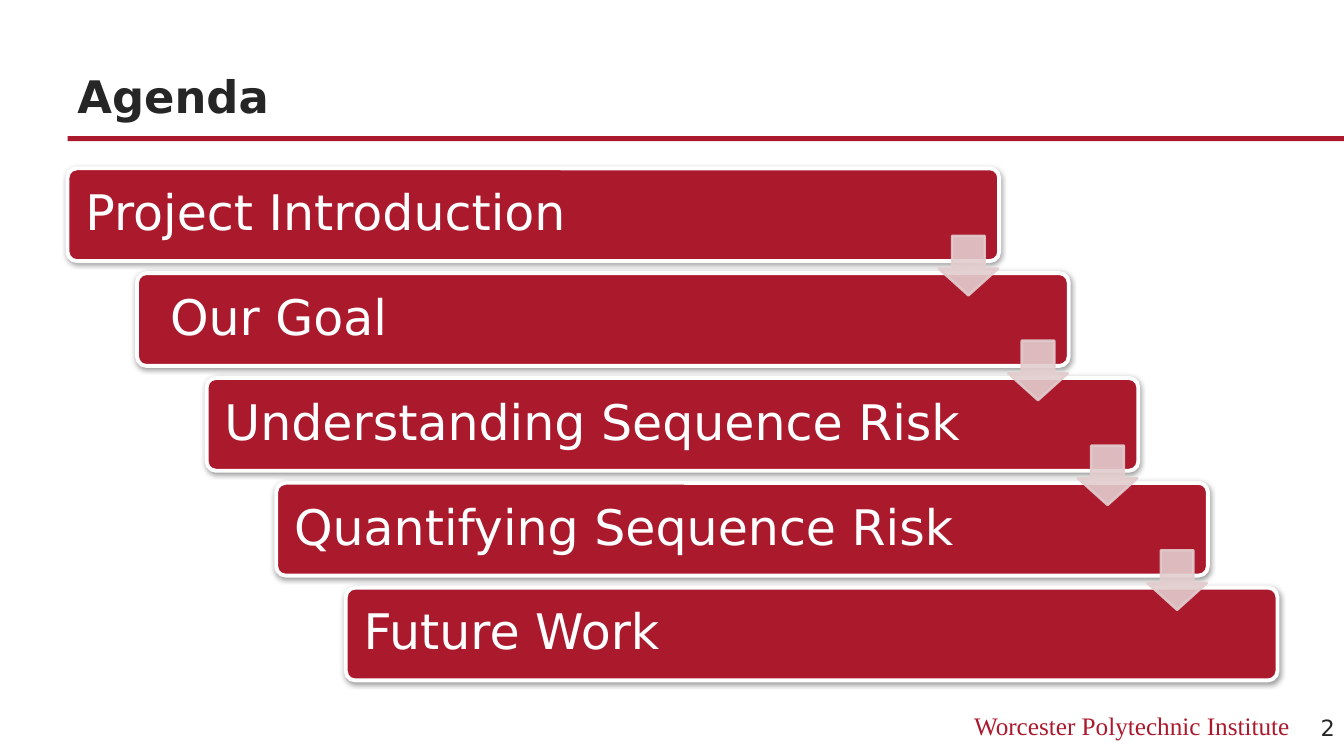
from dataclasses import dataclass

import pptx
import pptx.dml.color
import pptx.enum.shapes
import pptx.enum.text
import pptx.oxml
import pptx.oxml.ns
import pptx.util
from pptx.util import Inches

COLORS = {"crimson": "AB192D", "pink": "E2CCCD", "ink": "262626", "white": "FFFFFF"}
SANS, SERIF = "DejaVu Sans", "Times New Roman"
SHAPE = pptx.enum.shapes.MSO_SHAPE
ANCHOR = pptx.enum.text.MSO_ANCHOR
ALIGN = pptx.enum.text.PP_ALIGN

# Staircase geometry, in inches
BAR_LEFT, BAR_TOP, BAR_W, BAR_H = 0.67, 1.67, 9.24, 0.92
ARROW_LEFT, ARROW_TOP, ARROW_SIZE = 9.31, 2.34, 0.59
STEP_X, STEP_Y = 0.69, 1.04

SHADOW = (
    f'<a:outerShdw {pptx.oxml.ns.nsdecls("a")} blurRad="50800" dist="12700" '
    'dir="5280000" rotWithShape="0"><a:srgbClr val="000000">'
    '<a:alpha val="40000"/></a:srgbClr></a:outerShdw>'
)


@dataclass
class AgendaItem:
    label: str
    indent: float = 0.0


@dataclass
class Label:
    text: str
    box: tuple[float, float, float, float]
    size: float
    color: str
    font: str = SANS
    bold: bool = False
    align: ALIGN = ALIGN.LEFT
    anchor: ANCHOR = ANCHOR.TOP


ITEMS = [
    AgendaItem("Project Introduction"),
    AgendaItem("Our Goal", indent=0.15),
    AgendaItem("Understanding Sequence Risk"),
    AgendaItem("Quantifying Sequence Risk"),
    AgendaItem("Future Work"),
]
LABELS = [
    Label("Agenda", (0.67, 0.38, 12, 0.88), 32, "ink", bold=True, anchor=ANCHOR.BOTTOM),
    Label("Worcester Polytechnic Institute", (8, 7, 4.89, 0.4), 18, "crimson",
          font=SERIF, align=ALIGN.RIGHT),
    Label("2", (13, 7, 0.67, 0.43), 16, "ink", anchor=ANCHOR.MIDDLE),
]


def rgb(name: str) -> pptx.dml.color.RGBColor:
    return pptx.dml.color.RGBColor.from_string(COLORS[name])


def add_text(tf, text: str, size: float, color: str, font: str = SANS,
             bold: bool = False, align: ALIGN = ALIGN.LEFT):
    p = tf.paragraphs[0]
    p.alignment = align
    r = p.add_run()
    r.text = text
    r.font.name, r.font.size, r.font.bold = font, pptx.util.Pt(size), bold
    r.font.color.rgb = rgb(color)
    return p


def add_label(s, label: Label) -> None:
    tf = s.shapes.add_textbox(*map(Inches, label.box)).text_frame
    tf.word_wrap = True
    tf.vertical_anchor = label.anchor
    add_text(tf, label.text, label.size, label.color, label.font, label.bold, label.align)


def add_block(s, kind: SHAPE, box: tuple[float, float, float, float], fill: str,
              line: str | None = None, width: float = 0, adj: tuple[float, ...] = ()):
    sp = s.shapes.add_shape(kind, *map(Inches, box))
    sp.shadow.inherit = False
    for i, value in enumerate(adj):
        sp.adjustments[i] = value
    sp.fill.solid()
    sp.fill.fore_color.rgb = rgb(fill)
    if line:
        sp.line.color.rgb = rgb(line)
        sp.line.width = pptx.util.Pt(width)
    else:
        sp.line.fill.background()
    return sp


def add_bar(s, step: int, item: AgendaItem) -> None:
    box = (BAR_LEFT + step * STEP_X, BAR_TOP + step * STEP_Y, BAR_W, BAR_H)
    sp = add_block(s, SHAPE.ROUNDED_RECTANGLE, box, "crimson", "white", 2.75, (0.1,))
    effects = sp._element.spPr.find(pptx.oxml.ns.qn("a:effectLst"))
    effects.append(pptx.oxml.parse_xml(SHADOW))
    tf = sp.text_frame
    tf.word_wrap = True
    tf.vertical_anchor = ANCHOR.MIDDLE
    tf.margin_left = Inches(0.15 + item.indent)
    p = add_text(tf, item.label, 35, "white")
    p.line_spacing = 0.9


def add_arrow(s, step: int) -> None:
    box = (ARROW_LEFT + step * STEP_X, ARROW_TOP + step * STEP_Y, ARROW_SIZE, ARROW_SIZE)
    sp = add_block(s, SHAPE.DOWN_ARROW, box, "pink", "pink", 1.75, (0.55, 0.45))
    # Fill and outline are both 90% opaque
    for color in sp._element.spPr.iter(pptx.oxml.ns.qn("a:srgbClr")):
        color.append(pptx.oxml.parse_xml(
            f'<a:alpha {pptx.oxml.ns.nsdecls("a")} val="90000"/>'))


def main() -> None:
    prs = pptx.Presentation()
    prs.slide_width, prs.slide_height = Inches(13.33), Inches(7.5)
    s = prs.slides.add_slide(prs.slide_layouts[6])

    # Title rule, title, footer and page number
    add_block(s, SHAPE.RECTANGLE, (0.67, 1.35, 12.67, 0.05), "crimson")
    for label in LABELS:
        add_label(s, label)

    # Agenda staircase, with arrows on top of the bars
    for step, item in enumerate(ITEMS):
        add_bar(s, step, item)
    for step in range(len(ITEMS) - 1):
        add_arrow(s, step)

    prs.save("out.pptx")


if __name__ == "__main__":
    main()
